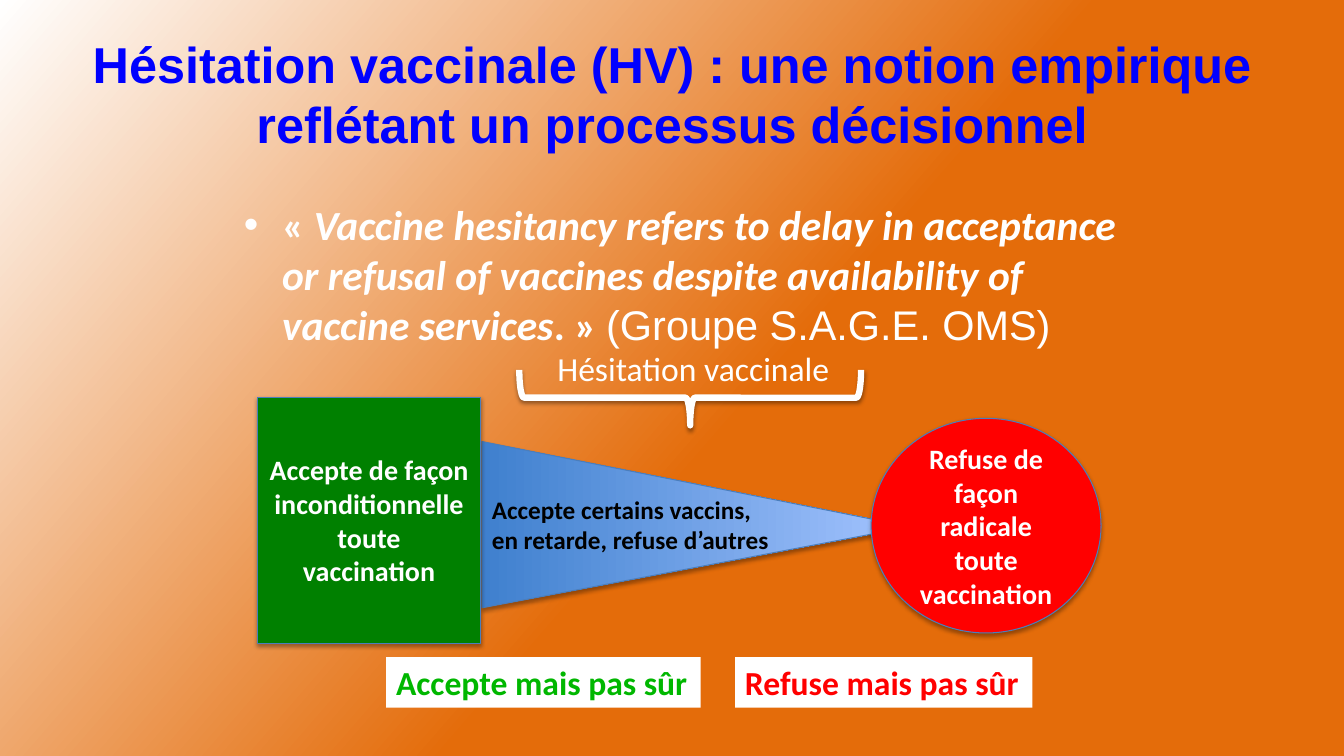
from lxml.etree import SubElement
from pptx import Presentation
from pptx.dml.color import RGBColor
from pptx.enum.shapes import MSO_SHAPE
from pptx.enum.text import MSO_ANCHOR, MSO_AUTO_SIZE, PP_ALIGN
from pptx.oxml.ns import qn
from pptx.util import Inches, Pt

WHITE, RED, OUTLINE = "FFFFFF", "FF0000", "4B7EBC"


def rgb(color):
    return RGBColor.from_string(color)


def set_gradient(fill, angle, *stops):
    """Apply two (position, colour) stops; the angle runs counter-clockwise."""
    fill.gradient()
    fill.gradient_angle = angle
    for stop, (position, color) in zip(fill.gradient_stops, stops):
        stop.position = position
        stop.color.rgb = rgb(color)


def add_shadow(shape, opacity=35, distance=1.8):
    shape.shadow.inherit = False
    effects = shape._element.spPr.find(qn("a:effectLst"))
    shadow = SubElement(effects, qn("a:outerShdw"), blurRad=str(Pt(3.1)),
                        dist=str(Pt(distance)), dir="5400000", rotWithShape="0")
    black = SubElement(shadow, qn("a:srgbClr"), val="000000")
    SubElement(black, qn("a:alpha"), val=str(opacity * 1000))


def style_paragraph(paragraph, size, color, bold=True, font="Calibri"):
    paragraph.font.name = font
    paragraph.font.size = Pt(size)
    paragraph.font.bold = bold
    paragraph.font.color.rgb = rgb(color)


def write_lines(frame, lines, size, color, align=PP_ALIGN.LEFT, **style):
    for number, line in enumerate(lines):
        paragraph = frame.add_paragraph() if number else frame.paragraphs[0]
        paragraph.text = line
        paragraph.alignment = align
        style_paragraph(paragraph, size, color, **style)


def add_outlined(slide, preset, box, color=OUTLINE, width=0.75):
    shape = slide.shapes.add_shape(preset, *map(Inches, box))
    shape.line.color.rgb = rgb(color)
    shape.line.width = Pt(width)
    return shape


def add_stance(slide, preset, box, color, lines):
    stance = add_outlined(slide, preset, box)
    stance.fill.solid()
    stance.fill.fore_color.rgb = rgb(color)
    add_shadow(stance)
    stance.text_frame.word_wrap = True
    stance.text_frame.vertical_anchor = MSO_ANCHOR.MIDDLE
    write_lines(stance.text_frame, lines, 20, WHITE, PP_ALIGN.CENTER)


def add_label(slide, box, lines, size, color, background=None, bold=True):
    label = slide.shapes.add_textbox(*map(Inches, box))
    if background:
        label.fill.solid()
        label.fill.fore_color.rgb = rgb(background)
    label.text_frame.word_wrap = False
    label.text_frame.auto_size = MSO_AUTO_SIZE.SHAPE_TO_FIT_TEXT
    write_lines(label.text_frame, lines, size, color, bold=bold)


def add_title(slide, text):
    title = slide.shapes.add_textbox(Inches(0.67), Inches(0.3), Inches(12), Inches(1.25))
    title.text_frame.word_wrap = True
    title.text_frame.vertical_anchor = MSO_ANCHOR.MIDDLE
    write_lines(title.text_frame, [text], 36, "0000FF", PP_ALIGN.CENTER, font="Arial")


def add_definition(slide):
    definition = slide.shapes.add_textbox(Inches(2.32), Inches(1.93), Inches(9), Inches(1.48))
    definition.text_frame.word_wrap = True
    paragraph = definition.text_frame.paragraphs[0]
    style_paragraph(paragraph, 29.6, WHITE)
    paragraph.space_before = Pt(6)
    properties = paragraph._p.get_or_add_pPr()
    properties.set("marL", str(Inches(0.38)))
    properties.set("indent", str(-Inches(0.38)))
    bullet_font = SubElement(properties, qn("a:buFont"), typeface="Arial")
    bullet_font.addnext(SubElement(properties, qn("a:buChar"), char="•"))
    properties.append(properties.find(qn("a:defRPr")))

    opening, quote, closing, author = (paragraph.add_run() for _ in range(4))
    opening.text = "« "
    quote.text = ("Vaccine hesitancy refers to delay in acceptance or refusal of "
                  "vaccines despite availability of vaccine services")
    quote.font.italic = True
    closing.text = ". » "
    author.text = "(Groupe S.A.G.E. OMS)"
    author.font.name = "Arial"
    author.font.bold = False


def add_hesitancy_wedge(slide):
    wedge = add_outlined(slide, MSO_SHAPE.ISOSCELES_TRIANGLE, (6.08, 3.08, 1.65, 4.25))
    wedge.rotation = 90
    wedge.adjustments[0] = 0.513
    set_gradient(wedge.fill, 90, (0, "3F80CE"), (1, "A4C4FF"))
    add_shadow(wedge)


def add_hesitancy_brace(slide):
    brace = add_outlined(slide, MSO_SHAPE.RIGHT_BRACE, (6.57, 2.25, 0.55, 3.39), WHITE, 4.5)
    brace.rotation = 90
    brace.fill.background()
    add_shadow(brace, 38, 1.6)


def main():
    presentation = Presentation()
    presentation.slide_width, presentation.slide_height = Inches(13.33), Inches(7.5)
    slide = presentation.slides.add_slide(presentation.slide_layouts[6])
    set_gradient(slide.background.fill, 139, (0.45, "E46C0A"), (1, WHITE))

    add_hesitancy_wedge(slide)
    add_title(slide, "Hésitation vaccinale (HV) : une notion empirique "
                     "reflétant un processus décisionnel")
    add_definition(slide)
    add_stance(slide, MSO_SHAPE.RECTANGLE, (2.55, 3.94, 2.22, 2.44), "008000",
               ["Accepte de façon inconditionnelle", "toute", "vaccination"])
    add_stance(slide, MSO_SHAPE.OVAL, (8.64, 4.15, 2.28, 2.13), RED,
               ["Refuse de façon radicale toute vaccination"])
    add_label(slide, (4.78, 4.85, 3.01, 0.71),
              ["Accepte certains vaccins,", "en retarde, refuse d’autres"], 18, "000000")
    add_label(slide, (3.83, 6.52, 3.12, 0.5), ["Accepte mais pas sûr"], 24, "00B700", WHITE)
    add_label(slide, (7.29, 6.52, 2.95, 0.5), ["Refuse mais pas sûr"], 24, RED, WHITE)
    add_hesitancy_brace(slide)
    add_label(slide, (5.43, 3.4, 2.94, 0.5), ["Hésitation vaccinale"], 24, WHITE, bold=False)
    presentation.save("out.pptx")


if __name__ == "__main__":
    main()
